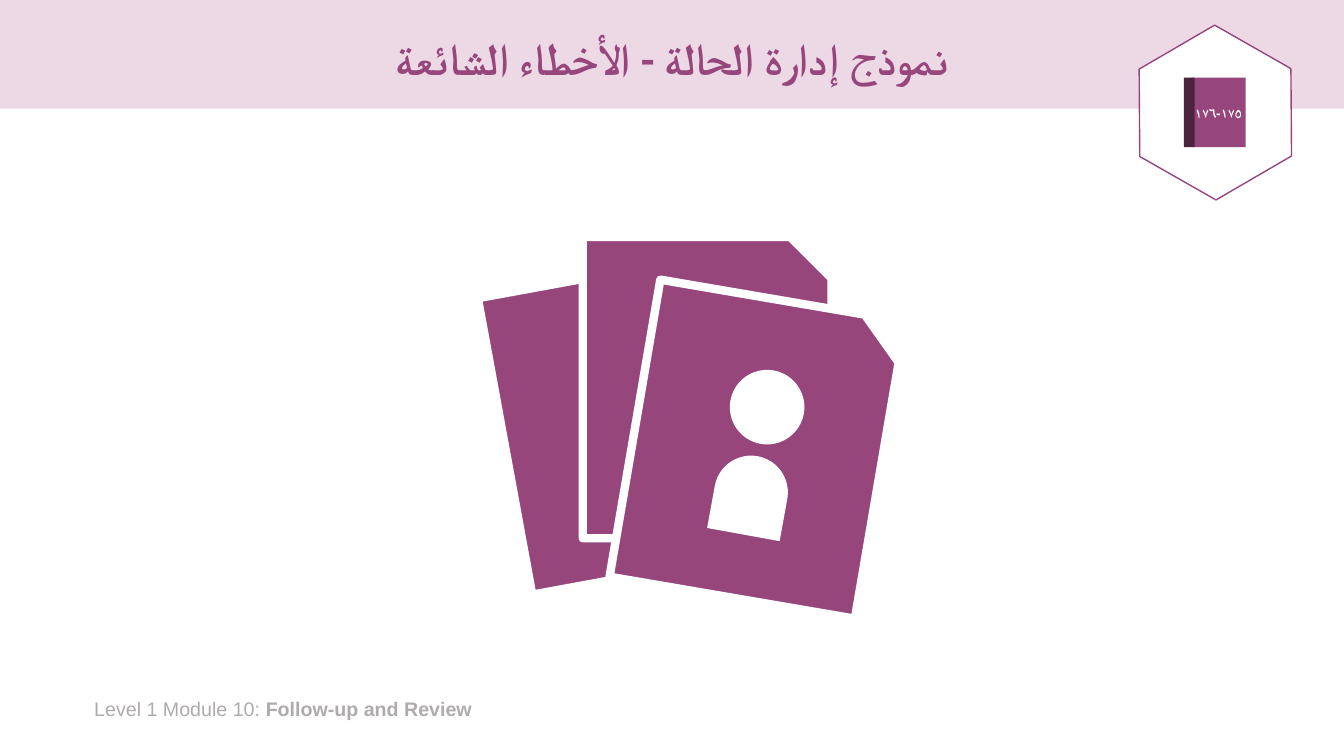
import pptx
import pptx.dml.color
import pptx.enum.shapes
import pptx.enum.text
import pptx.oxml
import pptx.oxml.ns
import pptx.util

Pt = pptx.util.Pt
SHAPE = pptx.enum.shapes.MSO_SHAPE
ALIGN = pptx.enum.text.PP_ALIGN
ANCHOR = pptx.enum.text.MSO_ANCHOR

PLUM, DARK_PLUM, PINK = "97467C", "4C233E", "EDD8E6"
WHITE, GREY = "FFFFFF", "AFABAB"


def color(hex_string):
    return pptx.dml.color.RGBColor.from_string(hex_string)


def add_part(shapes, kind, box, fill, line=None, line_width=1, rotation=0):
    part = shapes.add_shape(kind, *[Pt(length) for length in box])
    part.shadow.inherit = False
    part.rotation = rotation
    part.fill.solid()
    part.fill.fore_color.rgb = color(fill)
    if line:
        part.line.color.rgb = color(line)
        part.line.width = Pt(line_width)
    else:
        part.line.fill.background()
    return part


def style_run(run, size, font, hex_string, bold=False):
    run.font.size = Pt(size)
    run.font.name = font
    run.font.bold = bold
    run.font.color.rgb = color(hex_string)


def write_arabic(frame, text, size, font, hex_string):
    """Centred, bold, right-to-left line."""
    frame.text = text
    frame.vertical_anchor = ANCHOR.MIDDLE
    line = frame.paragraphs[0]
    line.alignment = ALIGN.CENTER
    line._p.get_or_add_pPr().set("rtl", "1")
    run = line.runs[0]
    style_run(run, size, font, hex_string, bold=True)
    run._r.get_or_add_rPr().append(pptx.oxml.parse_xml(
        f'<a:cs {pptx.oxml.ns.nsdecls("a")} typeface="{font}"/>'))
    return line


def add_header(slide, left, top, width, height):
    add_part(slide.shapes, SHAPE.RECTANGLE, (left, top, width, height), PINK)
    title = slide.shapes.add_textbox(
        Pt(left + 66), Pt(top + 9.5), Pt(width - 132), Pt(height - 9.5))
    title.text_frame.word_wrap = True
    line = write_arabic(title.text_frame, "نموذج إدارة الحالة - الأخطاء الشائعة",
                        32, "Calibri", PLUM)
    line.line_spacing = 0.9


def add_case_files(slide, left, top):
    files = slide.shapes.add_group_shape().shapes
    # Fanned cards, back to front
    for dx, dy, rotation in ((0, 26, -10.4), (57, 0, 0), (93, 44, 9.7)):
        add_part(files, SHAPE.SNIP_1_RECTANGLE, (left + dx, top + dy, 177.8, 215.3),
                 PLUM, WHITE, 6, rotation)
    # Person on the front card
    body = add_part(files, SHAPE.ROUND_2_SAME_RECTANGLE,
                    (left + 150.5, top + 156.2, 52.6, 56.9), WHITE, rotation=10.3)
    body.adjustments[0] = 0.5
    body.adjustments[1] = 0
    add_part(files, SHAPE.OVAL, (left + 162, top + 95, 53.3, 53.3), WHITE, rotation=10.3)


def add_page_badge(slide, left, top, width, height):
    badge = slide.shapes.add_group_shape().shapes
    hexagon = add_part(badge, SHAPE.HEXAGON, (left, top, width, height),
                       WHITE, PLUM, 1, 29.7)
    hexagon.adjustments[0] = 0.29
    hexagon.adjustments[1] = 1.155
    # Book with page numbers, then its spine
    book_top = top + 29
    book = add_part(badge, SHAPE.RECTANGLE, (left + 45.4, book_top, 38.8, 49.8), PLUM)
    write_arabic(book.text_frame, "١٧٥-١٧٦", 10, "Arial", WHITE)
    book.text_frame.word_wrap = False
    add_part(badge, SHAPE.RECTANGLE, (left + 40.2, book_top, 7.7, 49.8), DARK_PLUM)


def add_footer(slide, left, top, width, height):
    footer = slide.shapes.add_textbox(Pt(left), Pt(top), Pt(width), Pt(height))
    footer.text_frame.word_wrap = True
    line = footer.text_frame.paragraphs[0]
    for text, bold in (("Level 1 Module 10: ", False), ("Follow-up and Review", True)):
        run = line.add_run()
        run.text = text
        style_run(run, 14, "Arial", GREY, bold)


def main():
    deck = pptx.Presentation()
    deck.slide_width, deck.slide_height = Pt(960), Pt(540)
    slide = deck.slides.add_slide(deck.slide_layouts[6])
    add_header(slide, 0, 0, 960, 77.6)
    add_footer(slide, 60.2, 494.5, 328, 24.2)
    add_case_files(slide, 359.3, 169.2)
    add_page_badge(slide, 805.5, 26.4, 125.3, 108)
    deck.save("out.pptx")


if __name__ == "__main__":
    main()
